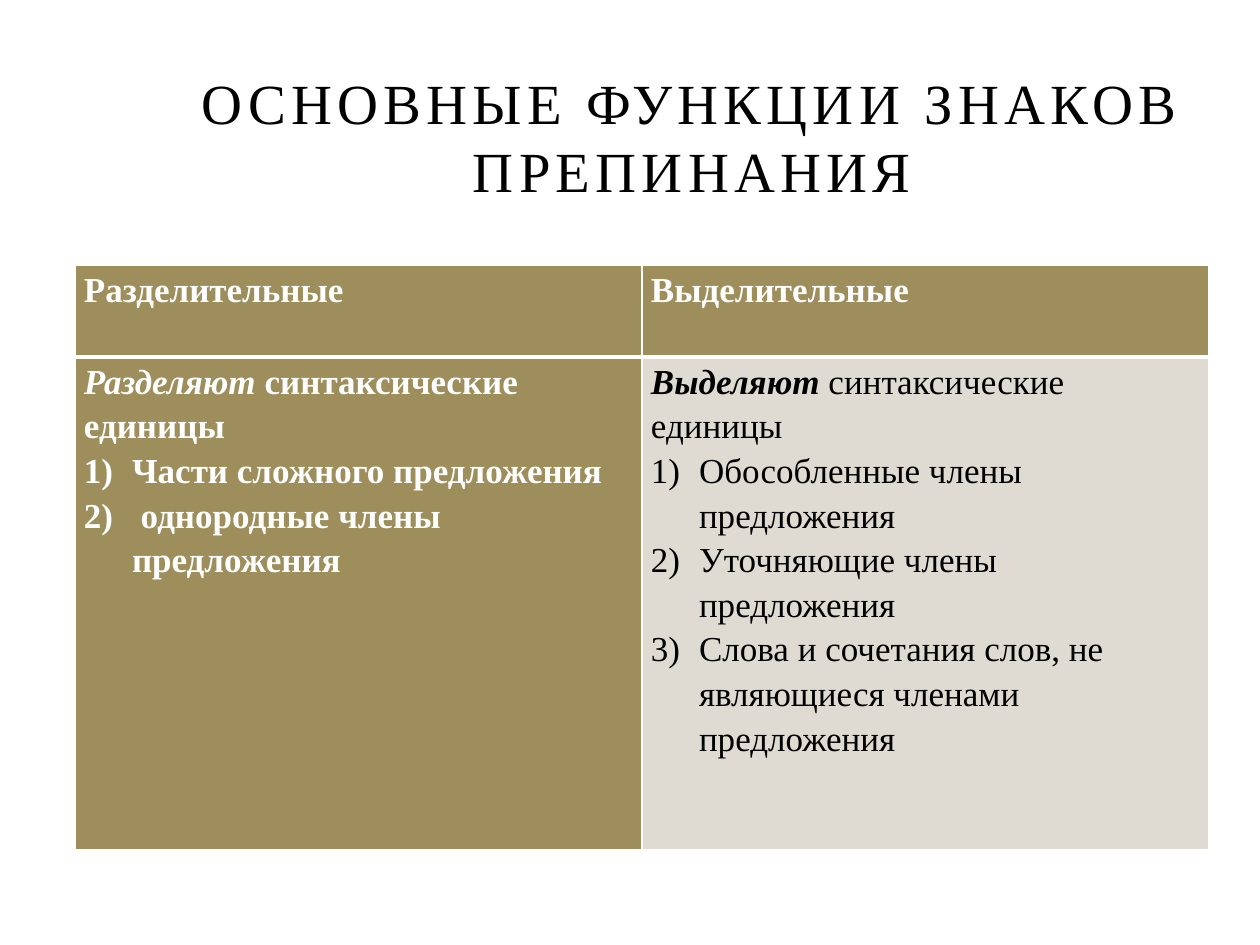
from dataclasses import dataclass

from lxml import etree
from pptx import Presentation
from pptx.dml.color import RGBColor
from pptx.enum.text import MSO_ANCHOR, PP_ALIGN
from pptx.oxml.ns import qn
from pptx.util import Emu, Pt

BOTTOM, CENTER = MSO_ANCHOR.BOTTOM, PP_ALIGN.CENTER

# Content: (emphasised word, rest of the sentence, numbered items)
TITLE = "ОСНОВНЫЕ ФУНКЦИИ ЗНАКОВ ПРЕПИНАНИЯ"
HEADINGS = ["Разделительные", "Выделительные"]
FUNCTIONS = [
    ("Разделяют", " синтаксические единицы",
     ["Части сложного предложения", " однородные члены предложения"]),
    ("Выделяют", " синтаксические единицы",
     ["Обособленные члены предложения", "Уточняющие члены предложения",
      "Слова и сочетания слов, не являющиеся членами предложения"]),
]


@dataclass(frozen=True)
class Theme:
    font: str = "Times New Roman"
    title_size: float = 32.4
    body_size: int = 20
    letter_spacing: int = 300
    line_spacing: float = 1.15
    ink: str = "000000"
    white: str = "FFFFFF"
    olive: str = "9E8E5C"
    sand: str = "DFDBD2"
    thin: int = 1
    thick: int = 3


THEME = Theme()

# Layout in px
SLIDE = (1260, 945)
TITLE_BOX = (125, 83, 1134, 127)
TABLE_LEFT, TABLE_TOP = 75, 265
COLUMN_WIDTH = 567
ROW_HEIGHTS = [92, 493]
CELL_INSET = 9
LIST_INDENT = 48


def px(length):
    return Emu(round(length * 914400 / 126))


def add_run(paragraph, text, color, size, **style):
    run = paragraph.add_run()
    run.text = text
    font = run.font
    for name, value in {"name": THEME.font, "size": Pt(size), **style}.items():
        setattr(font, name, value)
    font.color.rgb = RGBColor.from_string(color)
    return run


def number_paragraph(paragraph):
    props = paragraph._p.get_or_add_pPr()
    props.set("marL", str(px(LIST_INDENT)))
    props.set("indent", str(-px(LIST_INDENT)))
    etree.SubElement(props, qn("a:buFont"), typeface="+mj-lt")
    etree.SubElement(props, qn("a:buAutoNum"), type="arabicParenR")


def set_borders(cell, widths):
    props = cell._tc.get_or_add_tcPr()
    for place, (side, width) in enumerate(widths.items()):
        line = etree.Element(qn(f"a:ln{side}"), w=str(Pt(width)))
        fill = etree.SubElement(line, qn("a:solidFill"))
        etree.SubElement(fill, qn("a:srgbClr"), val=THEME.white)
        props.insert(place, line)


def format_cell(cell, fill, borders):
    insets = {"margin_left": px(CELL_INSET), "margin_right": px(CELL_INSET),
              "margin_top": 0, "margin_bottom": 0}
    for name, value in insets.items():
        setattr(cell, name, value)
    cell.fill.solid()
    cell.fill.fore_color.rgb = RGBColor.from_string(fill)
    set_borders(cell, borders)


def add_title(slide):
    frame = slide.shapes.add_textbox(*map(px, TITLE_BOX)).text_frame
    frame.word_wrap = True
    frame.vertical_anchor = BOTTOM
    heading = frame.paragraphs[0]
    heading.alignment = CENTER
    run = add_run(heading, TITLE, THEME.ink, THEME.title_size)
    run.font._element.set("spc", str(THEME.letter_spacing))


def add_functions_table(slide):
    columns = len(HEADINGS)
    table = slide.shapes.add_table(
        len(ROW_HEIGHTS), columns, px(TABLE_LEFT), px(TABLE_TOP),
        px(COLUMN_WIDTH * columns), px(sum(ROW_HEIGHTS))).table
    table.horz_banding = False
    for row, height in zip(table.rows, ROW_HEIGHTS):
        row.height = px(height)
    for column in table.columns:
        column.width = px(COLUMN_WIDTH)

    thin, thick = THEME.thin, THEME.thick
    header_borders = {"L": thin, "R": thin, "T": thin, "B": thick}
    body_borders = {"L": thin, "R": thin, "T": thick, "B": thin}
    # Body columns: fill, text colour, bold
    body_styles = [(THEME.olive, THEME.white, True), (THEME.sand, THEME.ink, False)]

    for index, heading in enumerate(HEADINGS):
        # Header cell
        header = table.cell(0, index)
        format_cell(header, THEME.olive, header_borders)
        paragraph = header.text_frame.paragraphs[0]
        paragraph.line_spacing = THEME.line_spacing
        add_run(paragraph, heading, THEME.white, THEME.body_size, bold=True)

        # Body cell: lead sentence and numbered list
        fill, color, bold = body_styles[index]
        emphasis, rest, items = FUNCTIONS[index]
        body = table.cell(1, index)
        format_cell(body, fill, body_borders)
        lead = body.text_frame.paragraphs[0]
        lead.line_spacing = THEME.line_spacing
        add_run(lead, emphasis, color, THEME.body_size, bold=True, italic=True)
        add_run(lead, rest, color, THEME.body_size, bold=bold)
        for item in items:
            paragraph = body.text_frame.add_paragraph()
            paragraph.line_spacing = THEME.line_spacing
            number_paragraph(paragraph)
            add_run(paragraph, item, color, THEME.body_size, bold=bold)


def main():
    deck = Presentation()
    deck.slide_width, deck.slide_height = map(px, SLIDE)
    slide = deck.slides.add_slide(deck.slide_layouts[6])
    add_title(slide)
    add_functions_table(slide)
    deck.save("out.pptx")


if __name__ == "__main__":
    main()
